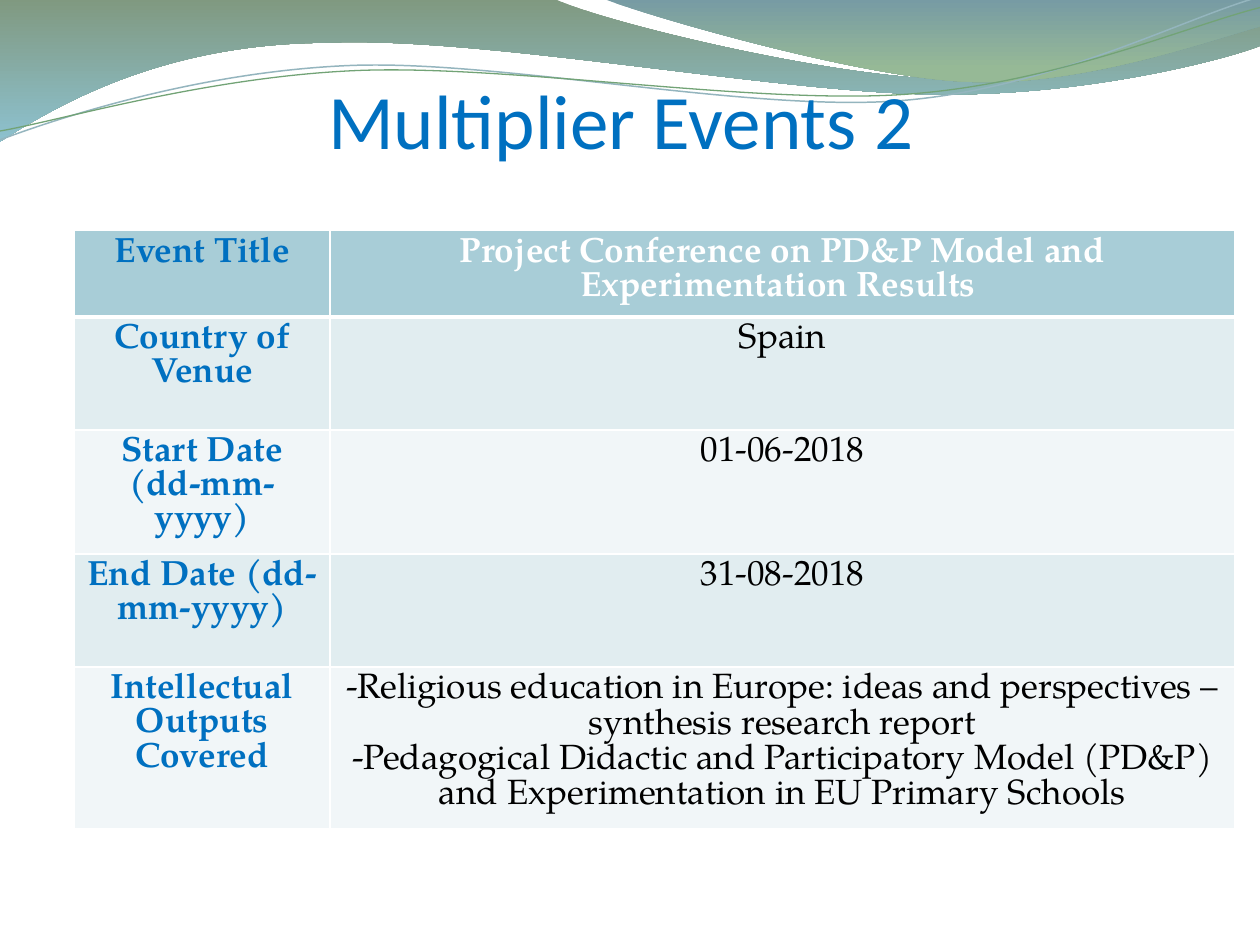
from dataclasses import dataclass
from math import cos, radians, sin

from lxml import etree
from pptx import Presentation
from pptx.dml.color import RGBColor
from pptx.enum.text import MSO_ANCHOR, MSO_AUTO_SIZE, PP_ALIGN
from pptx.oxml.ns import qn
from pptx.util import Cm, Pt

CENTER = PP_ALIGN.CENTER
BOTTOM = MSO_ANCHOR.BOTTOM
NO_AUTOFIT = MSO_AUTO_SIZE.NONE
TITLE_ONLY = 5


@dataclass(frozen=True)
class Theme:
    accent: str = "0070C0"
    text: str = "000000"
    white: str = "FFFFFF"
    header: str = "A8CDD7"
    bands: tuple = ("F1F6F8", "E1EDF0")
    title_font: str = "Calibri"
    body_font: str = "TeX Gyre Pagella"
    title_size: int = 44
    body_size: int = 20


THEME = Theme()

# Waves, in inches: a start point, then 2 numbers for a line, 6 for a curve
BANDS = [
    ([(0, -0.01), (4.4, -0.01),
      (4.76, 0.17, 6.64, 0.63, 7.58, 0.63), (8.53, 0.63, 9.58, 0.26, 10, 0.09),
      (10.01, 0.36),
      (9.83, 0.44, 8.7, 0.76, 7.46, 0.75), (6.22, 0.75, 3.82, 0.28, 2.57, 0.34),
      (1.29, 0.35, 0.46, 0.83, -0.01, 1.13), (0, -0.01)],
     [(0, "809980", 45), (1, "8DC1CF", 55)]),
    ([(4.79, -0.01),
      (5.09, 0.11, 6.82, 0.62, 7.69, 0.65), (8.56, 0.69, 9.61, 0.32, 10, 0.21),
      (10, 0), (4.79, -0.01)],
     [(0, "779BA4", 30), (0.8, "96B996", 45)]),
]
STROKES = [
    ([(0, 1.11), (0.48, 0.93, 1.58, 0.57, 2.77, 0.52),
      (3.95, 0.47, 5.93, 0.89, 7.13, 0.8), (8.33, 0.71, 9.38, 0.15, 9.98, -0.02)],
     "94B5BE", 0.85),
    ([(0, 1.04), (0.47, 0.96, 1.64, 0.61, 2.83, 0.56),
      (4.03, 0.51, 5.97, 0.83, 7.17, 0.75), (8.36, 0.67, 9.41, 0.21, 10, 0.06)],
     "72A376", 0.75),
]
STROKE_TILT = -2.7
STROKE_CENTER = (4.99, 0.58)

COL_WIDTHS = (5.15, 18.25)
ROW_HEIGHTS = (1.74, 2.28, 2.5, 2.28, 3.25)
ROWS = [
    ("Event Title", ["Project Conference on PD&P Model and Experimentation Results "]),
    ("Country of Venue", ["Spain"]),
    ("Start Date (dd-mm-yyyy)", ["01-06-2018"]),
    ("End Date (dd-mm-yyyy)", ["31-08-2018"]),
    ("Intellectual Outputs Covered",
     ["-Religious education in Europe: ideas and perspectives – synthesis research report",
      "-Pedagogical Didactic and Participatory Model (PD&P) and Experimentation "
      "in EU Primary Schools"]),
]


def rgb(value):
    return RGBColor.from_string(value)


def set_attrs(obj, values):
    for name, value in values.items():
        setattr(obj, name, value)


def write(p, text, color, **font):
    p.alignment = CENTER
    r = p.add_run()
    r.text = text
    set_attrs(r.font, font)
    r.font.color.rgb = rgb(color)


def turn(point, degrees):
    """Rotate a point about the centre of the strokes."""
    a = radians(degrees)
    cx, cy = STROKE_CENTER
    x, y = point[0] - cx, point[1] - cy
    return cx + x * cos(a) - y * sin(a), cy + x * sin(a) + y * cos(a)


def add_wave(slide, outline, close, tilt=0):
    points = [turn(seg[i:i + 2], -tilt) for seg in outline for i in range(0, len(seg), 2)]
    points = [(Cm(2.54 * x), Cm(2.54 * y)) for x, y in points]
    builder = slide.shapes.build_freeform(*points[0])
    builder.add_line_segments(points[1:], close=close)
    sp = builder.convert_to_shape()
    sp.shadow.inherit = False
    sp.rotation = tilt
    # Join each curve's three points into one Bezier segment
    lines = iter(list(sp._element.iter(qn("a:lnTo"))))
    for seg in outline[1:]:
        first = next(lines)
        if len(seg) == 6:
            first.tag = qn("a:cubicBezTo")
            for line in (next(lines), next(lines)):
                first.append(line[0])
                line.getparent().remove(line)
    return sp


def add_band(slide, outline, stops):
    sp = add_wave(slide, outline, True)
    sp.line.fill.background()
    sp.fill.gradient()
    sp.fill.gradient_angle = 270
    colors = sp._element.spPr.iter(qn("a:srgbClr"))
    for stop, (position, color, _) in zip(sp.fill.gradient_stops, stops):
        stop.position = position
        stop.color.rgb = rgb(color)
    # Opacity of each stop
    for clr, (_, _, opacity) in zip(colors, stops):
        etree.SubElement(clr, qn("a:alpha"), val=str(opacity * 1000))


def add_stroke(slide, outline, color, width):
    sp = add_wave(slide, outline, False, STROKE_TILT)
    sp.fill.background()
    sp.line.color.rgb = rgb(color)
    sp.line.width = Pt(width)


def fill_title(slide, text):
    title = slide.shapes.title
    set_attrs(title, dict(left=Cm(1.09), top=Cm(1.12), width=Cm(22.86), height=Cm(2.21)))
    tf = title.text_frame
    set_attrs(tf, dict(auto_size=NO_AUTOFIT, word_wrap=True, vertical_anchor=BOTTOM,
                       margin_left=0, margin_right=0, margin_top=Cm(0.13), margin_bottom=0))
    write(tf.paragraphs[0], text, THEME.accent,
          name=THEME.title_font, size=Pt(THEME.title_size))
    # Bring the title in front of the waves
    slide.shapes._spTree.append(title._element)


def set_borders(cell, widths):
    tc_pr = cell._tc.get_or_add_tcPr()
    for i, (side, width) in enumerate(widths.items()):
        ln = etree.Element(qn(f"a:ln{side}"), w=str(Pt(width)))
        fill = etree.SubElement(ln, qn("a:solidFill"))
        etree.SubElement(fill, qn("a:srgbClr"), val=THEME.white)
        tc_pr.insert(i, ln)


def fill_cell(cell, lines, color, bold, fill, borders):
    cell.fill.solid()
    cell.fill.fore_color.rgb = rgb(fill)
    set_borders(cell, borders)
    tf = cell.text_frame
    for i, line in enumerate(lines):
        p = tf.add_paragraph() if i else tf.paragraphs[0]
        write(p, line, color, name=THEME.body_font, size=Pt(THEME.body_size), bold=bold)


def add_event_table(slide):
    frame = slide.shapes.add_table(len(ROWS), len(COL_WIDTHS), Cm(1.5), Cm(4.65),
                                   Cm(sum(COL_WIDTHS)), Cm(sum(ROW_HEIGHTS)))
    table = frame.table
    for col, width in zip(table.columns, COL_WIDTHS):
        col.width = Cm(width)
    for row, height in zip(table.rows, ROW_HEIGHTS):
        row.height = Cm(height)
    for i, (label, lines) in enumerate(ROWS):
        header = i == 0
        fill = THEME.header if header else THEME.bands[i % 2]
        borders = dict(L=1, R=1, T=3 if i == 1 else 1, B=3 if header else 1)
        fill_cell(table.cell(i, 0), [label], THEME.accent, True, fill, borders)
        fill_cell(table.cell(i, 1), lines, THEME.white if header else THEME.text,
                  header, fill, borders)


def main():
    prs = Presentation()
    prs.slide_width, prs.slide_height = Cm(25.4), Cm(19.05)
    slide = prs.slides.add_slide(prs.slide_layouts[TITLE_ONLY])

    # Wave decoration
    for band in BANDS:
        add_band(slide, *band)
    for stroke in STROKES:
        add_stroke(slide, *stroke)

    # Content
    fill_title(slide, "Multiplier Events 2")
    add_event_table(slide)
    prs.save("out.pptx")


if __name__ == "__main__":
    main()
